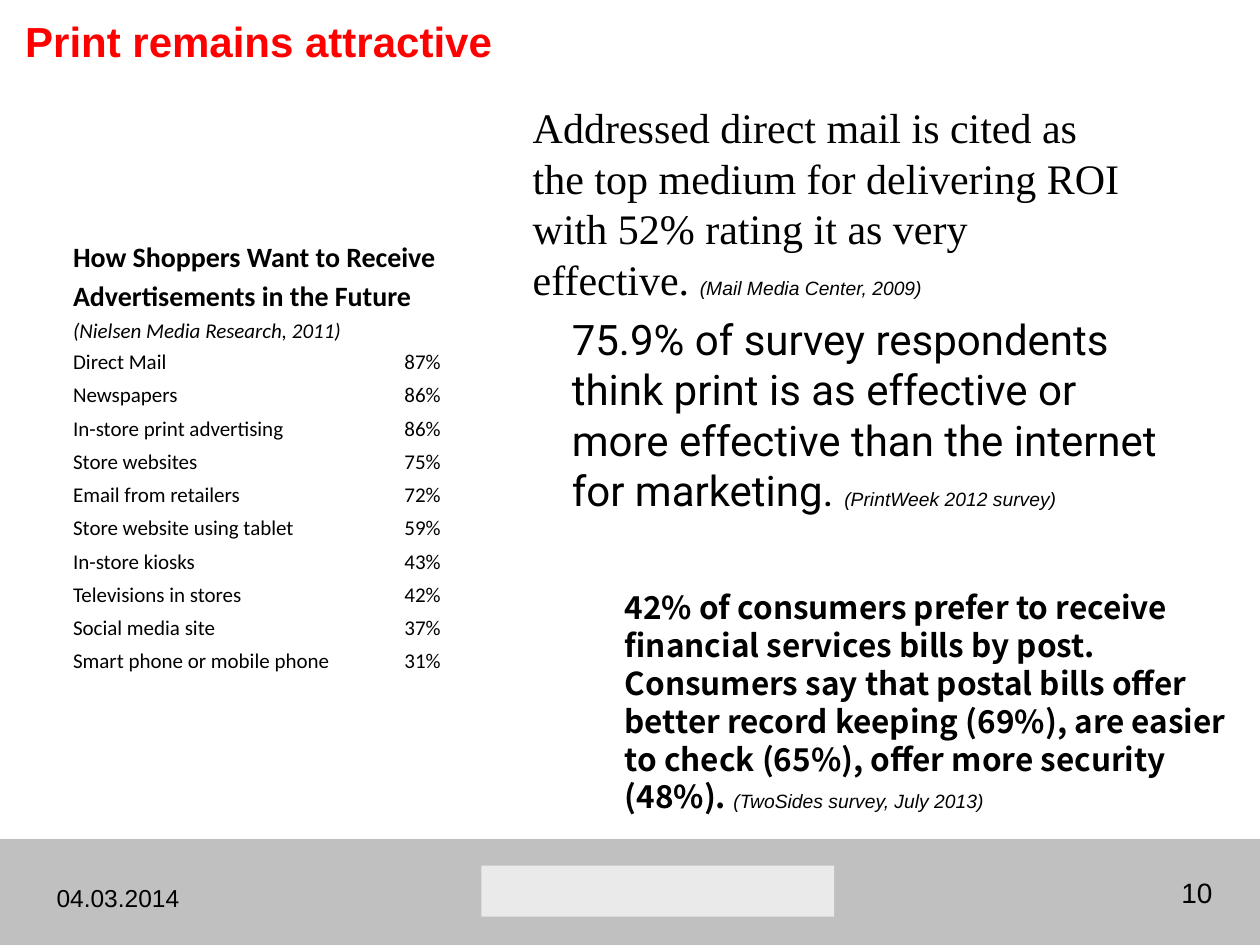
import pptx
import pptx.dml.color
import pptx.enum.shapes
import pptx.enum.text
import pptx.util
from dataclasses import dataclass


@dataclass(frozen=True)
class Theme:
    ink: str = "000000"
    red: str = "FF0000"
    pale: str = "EAEAEA"
    band: str = "C0C0C0"
    sans: str = "Arial"
    serif: str = "Times New Roman"
    table_font: str = "Calibri"
    title: int = 24
    heading: int = 16
    label: int = 12
    source: int = 11
    date: int = 14
    number: int = 16


THEME = Theme()
WIDTH, HEIGHT = pptx.util.Inches(10), pptx.util.Inches(7.5)
ALIGN = pptx.enum.text.PP_ALIGN

TITLE = "Print remains attractive"
TABLE_HEADING = "How Shoppers Want to Receive Advertisements in the Future"
TABLE_SOURCE = "(Nielsen Media Research, 2011)"
CHANNELS = [
    ("Direct Mail", 87),
    ("Newspapers", 86),
    ("In-store print advertising", 86),
    ("Store websites", 75),
    ("Email from retailers", 72),
    ("Store website using tablet", 59),
    ("In-store kiosks", 43),
    ("Televisions in stores", 42),
    ("Social media site", 37),
    ("Smart phone or mobile phone", 31),
]
FINDINGS = [
    ("Addressed direct mail is cited as the top medium for delivering ROI "
     "with 52% rating it as very effective. ",
     "(Mail Media Center, 2009)", THEME.serif, 24, False, (41.3, 10.13, 49, 20)),
    ("75.9% of survey respondents think print is as effective or more "
     "effective than the internet for marketing. ",
     "(PrintWeek 2012 survey)", "Roboto", 24, False, (44.4, 32.53, 50, 22.93)),
    ("42% of consumers prefer to receive financial services bills by post. "
     "Consumers say that postal bills offer better record keeping (69%), "
     "are easier to check (65%), offer more security (48%). ",
     "(TwoSides survey, July 2013)", "Noto Sans CJK KR", 18, True,
     (48.6, 61.6, 50, 25.6)),
]
FINDING_LEADING = 1.2


def across(percent):
    return round(WIDTH * percent / 100)


def down(percent):
    return round(HEIGHT * percent / 100)


def area(left, top, width, height):
    return across(left), down(top), across(width), down(height)


def style(font, name, size, color=THEME.ink, bold=False, italic=False):
    font.name = name
    font.size = pptx.util.Pt(size)
    font.bold, font.italic = bold, italic
    font.color.rgb = pptx.dml.color.RGBColor.from_string(color)


def add_span(para, text, *look, **options):
    span = para.add_run()
    span.text = text
    style(span.font, *look, **options)


def add_box(page, place, align=ALIGN.LEFT):
    box = page.shapes.add_textbox(*area(*place))
    box.text_frame.word_wrap = True
    para = box.text_frame.paragraphs[0]
    para.alignment = align
    return para


def add_panel(page, place, color):
    panel = page.shapes.add_shape(
        pptx.enum.shapes.MSO_SHAPE.RECTANGLE, *area(*place))
    panel.shadow.inherit = False
    panel.fill.solid()
    panel.fill.fore_color.rgb = pptx.dml.color.RGBColor.from_string(color)
    panel.line.fill.background()


def add_title(page):
    title = page.shapes.title
    title.left, title.top, title.width, title.height = area(1, 0.93, 97.8, 6.8)
    frame = title.text_frame
    frame.text = TITLE
    frame.vertical_anchor = pptx.enum.text.MSO_ANCHOR.TOP
    frame.auto_size = pptx.enum.text.MSO_AUTO_SIZE.NONE
    para = frame.paragraphs[0]
    para.alignment = ALIGN.LEFT
    style(para.font, THEME.sans, THEME.title, THEME.red, bold=True)


def add_footer(page):
    add_panel(page, (0, 88.8, 100, 11.2), THEME.band)
    add_panel(page, (38.2, 91.6, 28, 5.4), THEME.pale)
    for text, size, place, align in (
        ("04.03.2014", THEME.date, (3.5, 92.8, 11.8, 4.53), ALIGN.LEFT),
        ("10", THEME.number, (80.7, 92, 16.5, 4.93), ALIGN.RIGHT),
    ):
        para = add_box(page, place, align)
        para.text = text
        style(para.font, THEME.sans, size)


def fill_cell(cell, lines):
    cell.fill.background()
    cell.vertical_anchor = pptx.enum.text.MSO_ANCHOR.MIDDLE
    cell.margin_left = cell.margin_right = pptx.util.Inches(0.01)
    cell.margin_top = cell.margin_bottom = pptx.util.Inches(0.01)
    frame = cell.text_frame
    for index, (text, size, bold, italic) in enumerate(lines):
        para = frame.add_paragraph() if index else frame.paragraphs[0]
        para.text = text
        para.line_spacing = 1.15
        style(para.font, THEME.table_font, size, bold=bold, italic=italic)


def add_channel_table(page):
    table = page.shapes.add_table(
        len(CHANNELS) + 1, 2, *area(5.7, 24.8, 31, 46.8)).table
    table.first_row = table.horz_banding = False
    for column, share in zip(table.columns, (26.3, 4.7)):
        column.width = across(share)
    for index, row in enumerate(table.rows):
        row.height = down(3.52 if index else 11.6)
    table.cell(0, 0).merge(table.cell(0, 1))
    fill_cell(table.cell(0, 0), [
        (TABLE_HEADING, THEME.heading, True, False),
        (TABLE_SOURCE, THEME.label, False, True),
    ])
    for row, (channel, share) in enumerate(CHANNELS, start=1):
        for column, text in enumerate((channel, f"{share}%")):
            fill_cell(table.cell(row, column), [(text, THEME.label, False, False)])


def add_findings(page):
    for text, source, font, size, bold, place in FINDINGS:
        para = add_box(page, place)
        para.line_spacing = pptx.util.Pt(size * FINDING_LEADING)
        add_span(para, text, font, size, bold=bold)
        add_span(para, source, THEME.sans, THEME.source, italic=True)


def main():
    deck = pptx.Presentation()
    deck.slide_width, deck.slide_height = WIDTH, HEIGHT
    page = deck.slides.add_slide(deck.slide_layouts.get_by_name("Title Only"))
    add_footer(page)
    add_title(page)
    add_channel_table(page)
    add_findings(page)
    deck.save("out.pptx")


if __name__ == "__main__":
    main()
